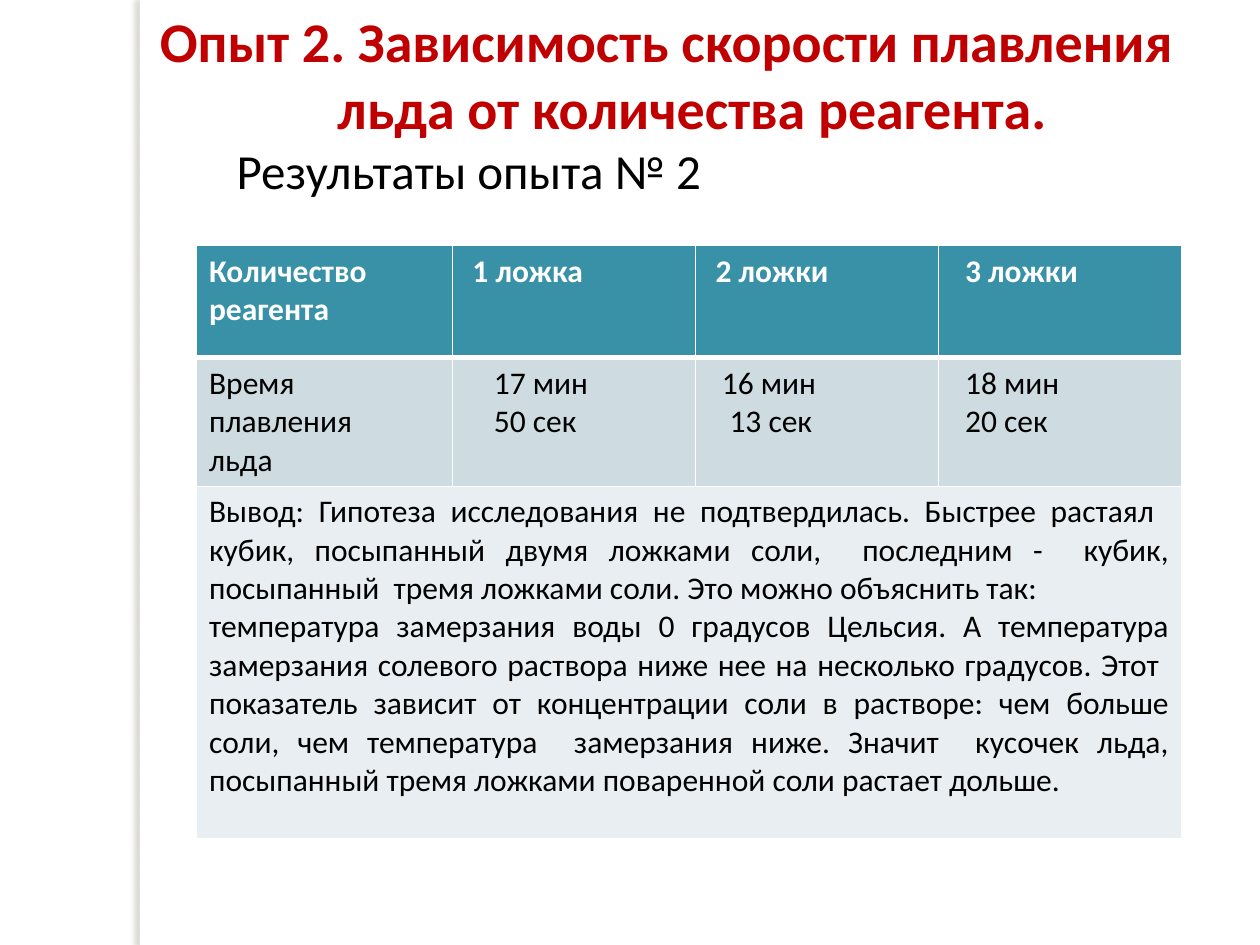
from lxml.etree import SubElement
from pptx import Presentation
from pptx.dml.color import RGBColor
from pptx.enum.shapes import MSO_SHAPE
from pptx.enum.text import PP_ALIGN
from pptx.oxml.ns import qn
from pptx.util import Inches, Pt


def rgb(value):
    return RGBColor.from_string(value)


def add_text(tf, lines, size, color, bold=False, align=None):
    """Fill a text frame with (text, left indent in inches) lines."""
    for i, (text, indent) in enumerate(lines):
        p = tf.paragraphs[0] if i == 0 else tf.add_paragraph()
        if indent:
            p._p.get_or_add_pPr().set("marL", str(Inches(indent)))
        if align is not None:
            p.alignment = align
        r = p.add_run()
        r.text = text
        r.font.name = "Calibri"
        r.font.size = Pt(size)
        r.font.bold = bold
        r.font.color.rgb = rgb(color)


prs = Presentation()
prs.slide_width, prs.slide_height = Inches(10), Inches(7.5)
s = prs.slides.add_slide(prs.slide_layouts[6])

# Vertical strip with a soft shadow to the left
sp = s.shapes.add_shape(MSO_SHAPE.RECTANGLE, Inches(1.11), 0, Inches(0.08), Inches(7.5))
sp.fill.solid()
sp.fill.fore_color.rgb = rgb("FFFFFF")
sp.line.fill.background()
sp.shadow.inherit = False
effects = sp._element.spPr.find(qn("a:effectLst"))
shadow = SubElement(effects, qn("a:outerShdw"), blurRad=str(Pt(3)), dist=str(Pt(3)),
                    dir=str(180 * 60000), algn="tl", rotWithShape="0")
shadow_color = SubElement(shadow, qn("a:srgbClr"), val="736F63")
SubElement(shadow_color, qn("a:alpha"), val="25000")

# Title and subtitle
tf = s.shapes.add_textbox(Inches(1.17), 0, Inches(8.83), Inches(1.72)).text_frame
tf.word_wrap = True
add_text(tf, [("Опыт 2. Зависимость скорости плавления", 0),
              ("льда от количества реагента.", 1.41)], 32, "C00000", bold=True)
p = tf.add_paragraph()
p._p.get_or_add_pPr().set("marL", str(Inches(0.61)))
r = p.add_run()
r.text = "Результаты опыта № 2"
r.font.name = "Calibri"
r.font.size = Pt(28)
r.font.color.rgb = rgb("000000")

# Results: each cell is a list of (text, indent) lines
conclusion = [
    ("Вывод: Гипотеза исследования не подтвердилась. Быстрее растаял  кубик, "
     "посыпанный двумя ложками соли,  последним -  кубик, посыпанный  тремя "
     "ложками соли. Это можно объяснить так:", 0),
    ("температура замерзания воды 0 градусов Цельсия. А температура замерзания "
     "солевого раствора ниже нее на несколько градусов. Этот  показатель зависит "
     "от концентрации соли в растворе: чем больше соли, чем температура  "
     "замерзания ниже. Значит  кусочек льда, посыпанный тремя ложками поваренной "
     "соли растает дольше.", 0),
]
rows = [
    [[("Количество", 0), ("реагента", 0)],
     [("1 ложка", 0.06)], [("2 ложки", 0.06)], [("3 ложки", 0.11)]],
    [[("Время плавления", 0), ("льда", 0)],
     [("17 мин", 0.23), ("50 сек", 0.23)],
     [("16 мин", 0.11), ("13 сек", 0.17)],
     [("18 мин", 0.11), ("20 сек", 0.11)]],
    [conclusion, [], [], []],
]
row_fills = ["3891A7", "CEDCE1", "E8EEF1"]
col_widths = [2.03, 1.93, 1.93, 1.93]
row_heights = [0.89, 1.02, 2.8]

table = s.shapes.add_table(3, 4, Inches(1.56), Inches(1.95),
                           Inches(sum(col_widths)), Inches(sum(row_heights))).table
for col, width in zip(table.columns, col_widths):
    col.width = Inches(width)
for row, height in zip(table.rows, row_heights):
    row.height = Inches(height)
table.cell(2, 0).merge(table.cell(2, 3))

for i, row in enumerate(rows):
    for j, lines in enumerate(row):
        cell = table.cell(i, j)
        # White borders, thicker under the header
        tc_pr = cell._tc.get_or_add_tcPr()
        for side in ("lnL", "lnR", "lnT", "lnB"):
            thick = (i, side) in [(0, "lnB"), (1, "lnT")]
            ln = SubElement(tc_pr, qn("a:" + side), w=str(Pt(3 if thick else 1)))
            line_fill = SubElement(ln, qn("a:solidFill"))
            SubElement(line_fill, qn("a:srgbClr"), val="FFFFFF")
        cell.fill.solid()
        cell.fill.fore_color.rgb = rgb(row_fills[i])
        add_text(cell.text_frame, lines, 18, "FFFFFF" if i == 0 else "000000",
                 bold=i == 0, align=PP_ALIGN.JUSTIFY if i == 2 else None)

prs.save("out.pptx")
